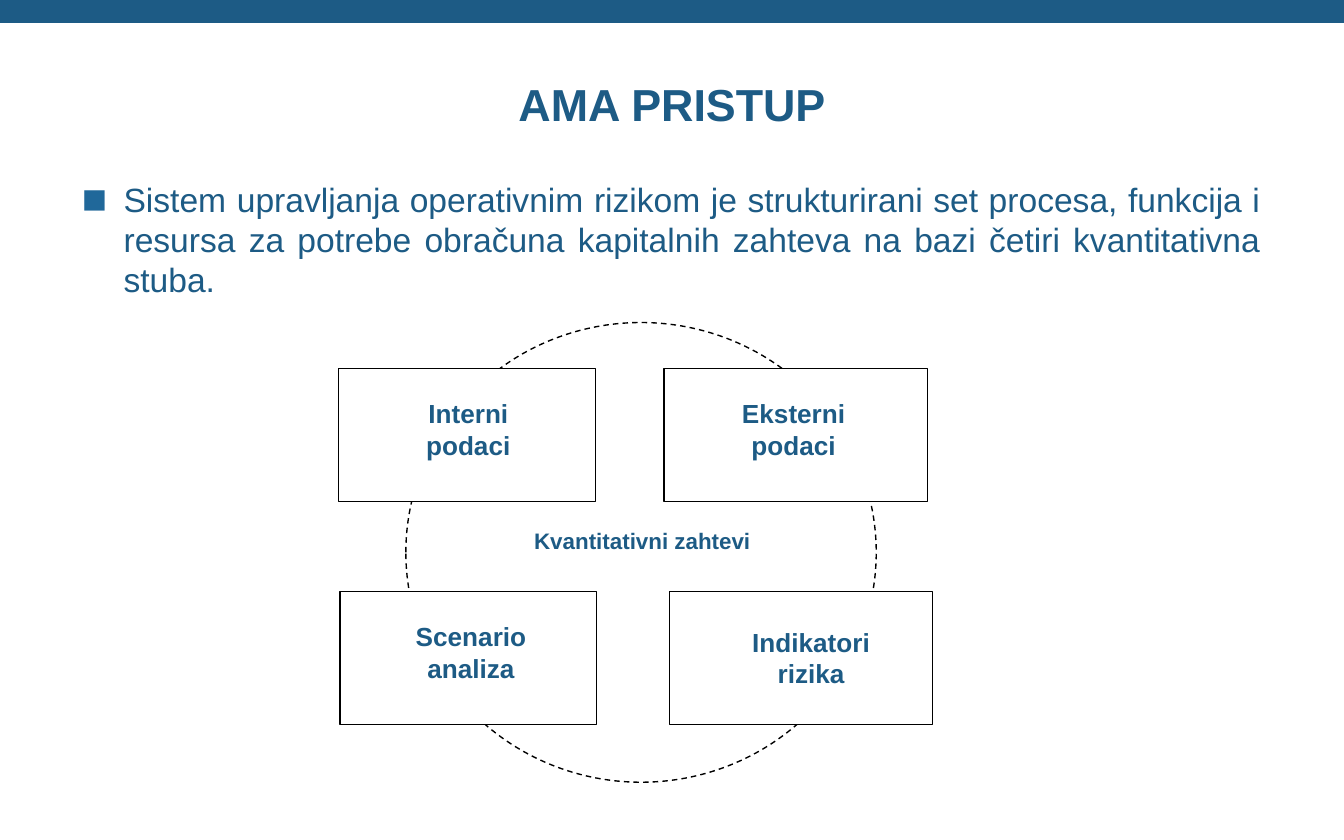
"""Build the AMA approach slide with its four quantitative pillars."""
from lxml.etree import SubElement
from pptx import Presentation
from pptx.dml.color import RGBColor
from pptx.enum.dml import MSO_LINE
from pptx.enum.shapes import MSO_SHAPE
from pptx.enum.text import MSO_ANCHOR, PP_ALIGN
from pptx.oxml.ns import qn
from pptx.util import Inches, Pt

BLUE = RGBColor(0x1D, 0x5B, 0x85)
BULLET_BLUE = RGBColor(0x20, 0x68, 0x9A)
BLACK = RGBColor(0, 0, 0)
WHITE = RGBColor(255, 255, 255)


def add_outline(page, kind, left, top, width, height):
    shape = page.shapes.add_shape(kind, Inches(left), Inches(top), Inches(width), Inches(height))
    shape.shadow.inherit = False
    shape.line.color.rgb = BLACK
    shape.line.width = Pt(0.75)
    return shape


def write_text(box, text, size, bold=True, align=PP_ALIGN.CENTER, wrap=True):
    frame = box.text_frame
    frame.text = text
    frame.word_wrap = wrap
    frame.margin_left = frame.margin_right = Inches(0.11)
    frame.margin_top = frame.margin_bottom = Inches(0.05)
    para = frame.paragraphs[0]
    para.alignment = align
    font = para.runs[0].font
    font.name, font.size, font.bold = "Arial", Pt(size), bold
    font.color.rgb = BLUE
    return para


deck = Presentation()
deck.slide_width, deck.slide_height = Inches(10), Inches(6.25)
page = deck.slides.add_slide(deck.slide_layouts[5])

band = page.shapes.add_shape(MSO_SHAPE.RECTANGLE, 0, 0, Inches(10), Inches(0.17))
band.shadow.inherit = False
band.fill.solid()
band.fill.fore_color.rgb = BLUE
band.line.fill.background()

title = page.shapes.title
title.left, title.top, title.width, title.height = Inches(0.5), Inches(0.25), Inches(9), Inches(1.04)
write_text(title, "AMA PRISTUP", 24)
title.text_frame.vertical_anchor = MSO_ANCHOR.MIDDLE

ring = add_outline(page, MSO_SHAPE.OVAL, 3.02, 2.4, 3.5, 3.42)
ring.fill.background()
ring.line.dash_style = MSO_LINE.DASH

pillars = [
    ("Interni podaci", 2.52, 2.74, 1.91, 2.87, 2.91, 1.23),
    ("Eksterni podaci", 4.94, 2.74, 1.96, 5.3, 2.91, 1.21),
    ("Scenario analiza", 2.53, 4.4, 1.91, 2.79, 4.57, 1.43),
    ("Indikatori rizika", 4.98, 4.4, 1.96, 5.34, 4.61, 1.39),
]
for label, left, top, width, label_left, label_top, label_width in pillars:
    pillar = add_outline(page, MSO_SHAPE.RECTANGLE, left, top, width, 0.99)
    pillar.fill.solid()
    pillar.fill.fore_color.rgb = WHITE
    box = page.shapes.add_textbox(Inches(label_left), Inches(label_top), Inches(label_width), Inches(0.58))
    write_text(box, label, 14)

center = page.shapes.add_textbox(Inches(3.86), Inches(3.87), Inches(1.84), Inches(0.31))
write_text(center, "Kvantitativni zahtevi", 12, wrap=False)

intro = page.shapes.add_textbox(Inches(0.5), Inches(1.28), Inches(8.99), Inches(1.02))
para = write_text(
    intro,
    "Sistem upravljanja operativnim rizikom je strukturirani set procesa, funkcija i "
    "resursa za potrebe obračuna kapitalnih zahteva na bazi četiri kvantitativna stuba.",
    18, bold=False, align=PP_ALIGN.JUSTIFY,
)
properties = para._p.get_or_add_pPr()
properties.set("marL", str(Inches(0.31)))
properties.set("indent", str(-Inches(0.31)))
bullet_color = SubElement(properties, qn("a:buClr"))
SubElement(bullet_color, qn("a:srgbClr"), val=str(BULLET_BLUE))
SubElement(properties, qn("a:buSzPct"), val="125000")
SubElement(properties, qn("a:buFont"), typeface="Arial")
SubElement(properties, qn("a:buChar"), char="■")

deck.save("out.pptx")
